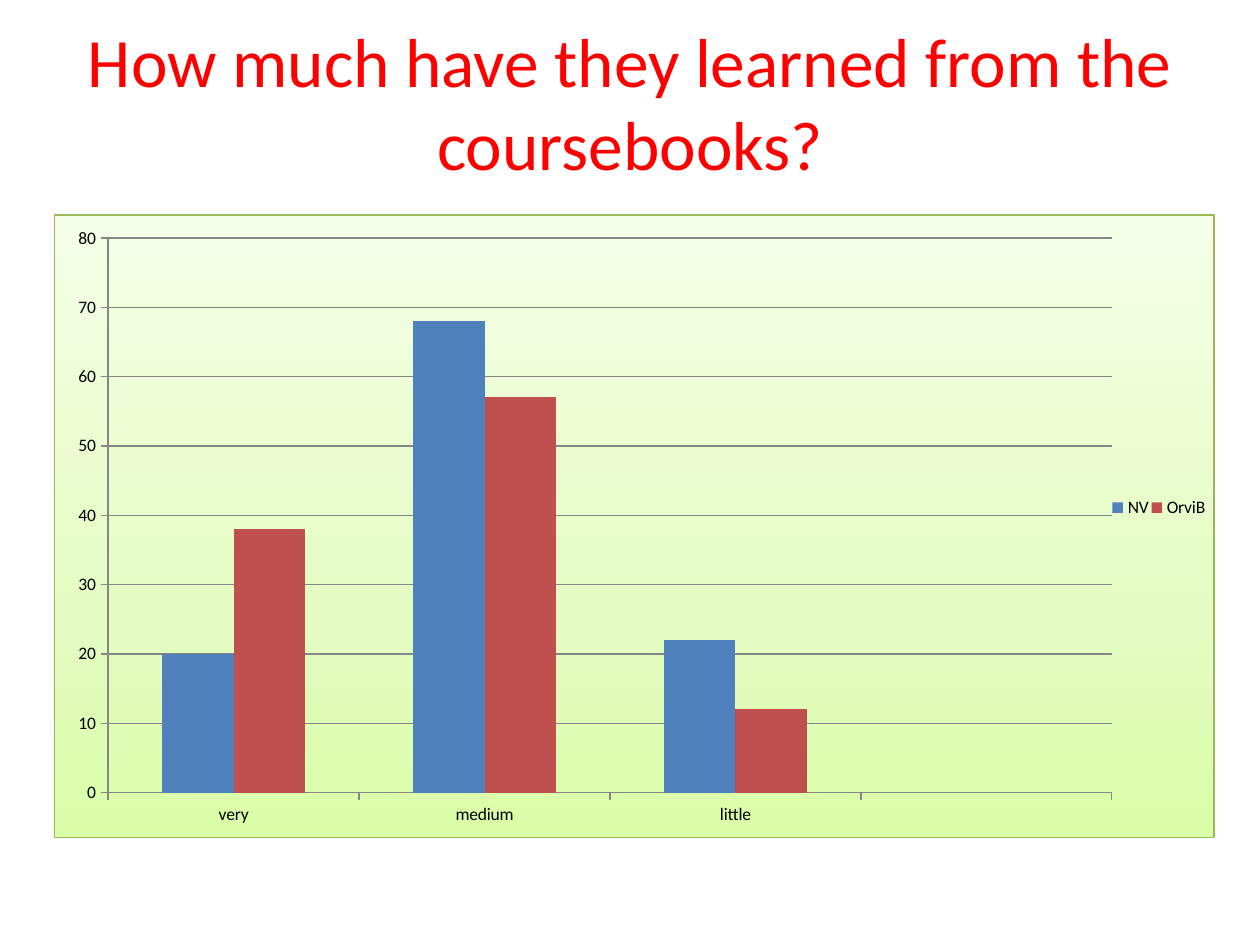
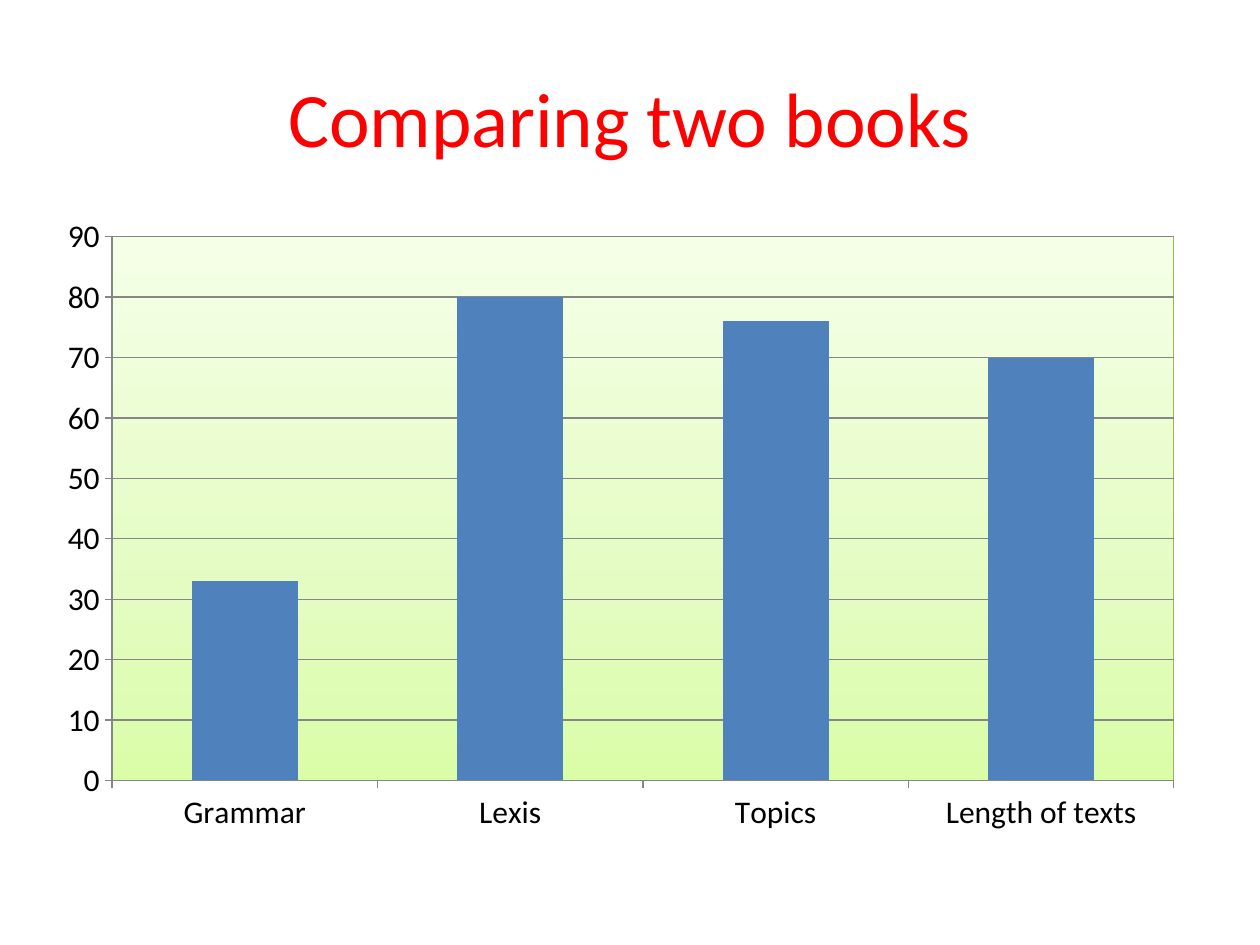
"""Builds two slides that compare coursebooks with column charts."""
from lxml.etree import SubElement
from pptx import Presentation
from pptx.chart.data import CategoryChartData
from pptx.dml.color import RGBColor
from pptx.enum.chart import XL_CHART_TYPE, XL_LEGEND_POSITION, XL_TICK_MARK
from pptx.enum.text import MSO_ANCHOR, MSO_AUTO_SIZE, PP_ALIGN
from pptx.oxml import parse_xml
from pptx.oxml.ns import nsdecls, qn
from pptx.util import Inches, Pt

HUES = {
    "title": "FF0000", "text": "000000", "line": "868686", "edge": "98B955",
    "low": "DAFDA7", "mid": "E4FCC2", "high": "F5FFE7",
    "blue": "4F81BD", "red": "C0504D",
}
STOPS = {"low": 0, "mid": 35, "high": 100}
FONT = "Calibri"


def hue(name):
    """Return the named colour."""
    return RGBColor.from_string(HUES[name])


def panel():
    """Return shape properties with the green gradient and its edge."""
    stops = "".join(
        f'<a:gs pos="{at * 1000}"><a:srgbClr val="{HUES[name]}"/></a:gs>'
        for name, at in STOPS.items())
    return parse_xml(
        f'<c:spPr {nsdecls("c", "a")}><a:gradFill rotWithShape="1">'
        f'<a:gsLst>{stops}</a:gsLst><a:lin ang="16200000" scaled="1"/></a:gradFill>'
        f'<a:ln w="{Pt(0.75)}"><a:solidFill><a:srgbClr val="{HUES["edge"]}"/>'
        '</a:solidFill></a:ln></c:spPr>')


def place(node, index, box, inner=False):
    """Give a chart part a fixed box in percent of the chart."""
    for old in node.findall(qn("c:layout")):
        node.remove(old)
    layout = parse_xml(f'<c:layout {nsdecls("c")}><c:manualLayout/></c:layout>')
    rules = [("layoutTarget", "inner")] if inner else []
    rules += [("xMode", "edge"), ("yMode", "edge")]
    rules += [(tag, part / 100) for tag, part in zip("xywh", box)]
    for tag, val in rules:
        SubElement(layout[0], qn(f"c:{tag}")).set("val", str(val))
    node.insert(index, layout)


class Deck:
    """Holds the shared style and the current slide."""

    def __init__(self):
        """Start an empty deck."""
        self.show = Presentation()
        self.show.slide_width, self.show.slide_height = Inches(10), Inches(7.5)
        self.slide = None

    def frame(self, box):
        """Turn percent of the slide into lengths."""
        wide, high = self.show.slide_width, self.show.slide_height
        return [round(part * side / 100) for part, side in zip(box, (wide, high) * 2)]

    def title(self, text, size, high):
        """Add a slide with its title."""
        self.slide = self.show.slides.add_slide(self.show.slide_layouts[5])
        head = self.slide.shapes.title
        head.left, head.top, head.width, head.height = self.frame((5, 4, 90, high))
        body = head.text_frame
        body.word_wrap, body.auto_size = True, MSO_AUTO_SIZE.NONE
        body.vertical_anchor = MSO_ANCHOR.MIDDLE
        para = body.paragraphs[0]
        para.alignment = PP_ALIGN.CENTER
        run = para.add_run()
        run.text = text
        run.font.name, run.font.size = FONT, Pt(size)
        run.font.color.rgb = hue("title")

    def axis(self, axis):
        """Style one axis."""
        axis.major_tick_mark = XL_TICK_MARK.OUTSIDE
        axis.minor_tick_mark = XL_TICK_MARK.NONE
        axis.format.line.color.rgb = hue("line")
        axis.format.line.width = Pt(0.75)

    def chart(self, box, cats, rows, size, top, plot):
        """Add a column chart and return it."""
        data = CategoryChartData()
        data.categories = cats
        for name, vals, _ in rows:
            data.add_series(name, vals)
        chart = self.slide.shapes.add_chart(
            XL_CHART_TYPE.COLUMN_CLUSTERED, *self.frame(box), data).chart
        chart.has_title = chart.has_legend = False
        chart.font.name, chart.font.size = FONT, Pt(size)
        chart.font.color.rgb = hue("text")
        bars = chart.plots[0]
        bars.gap_width, bars.overlap, bars.vary_by_categories = 150, 0, False
        for item, (_, _, shade) in zip(bars.series, rows):
            item.format.fill.solid()
            item.format.fill.fore_color.rgb = hue(shade)
        self.axis(chart.category_axis)
        scale = chart.value_axis
        self.axis(scale)
        scale.minimum_scale, scale.maximum_scale, scale.major_unit = 0, top, 10
        scale.has_major_gridlines = True
        grid = scale.major_gridlines.format.line
        grid.color.rgb, grid.width = hue("line"), Pt(0.75)
        place(self.area(chart), 0, plot, True)
        return chart

    def area(self, chart):
        """Return the plot area of a chart."""
        return chart.element.find(f"{qn('c:chart')}/{qn('c:plotArea')}")

    def legend(self, chart, box):
        """Add a legend on the right."""
        chart.has_legend = True
        key = chart.legend
        key.position, key.include_in_layout = XL_LEGEND_POSITION.RIGHT, False
        place(chart.element.find(f"{qn('c:chart')}/{qn('c:legend')}"), 1, box)


def main():
    """Build both slides and save them."""
    deck = Deck()
    deck.title("How much have they learned from the coursebooks?", 39.6, 13.5)
    chart = deck.chart(
        (4.3, 22.7, 92.1, 66), ["very", "medium", "little", ""],
        [("NV", (20, 68, 22, None), "blue"), ("OrviB", (38, 57, 12, None), "red")],
        10, 80, (4.6, 3.7, 86.6, 89.1))
    deck.legend(chart, (91, 44, 8.5, 6))
    chart.element.find(qn("c:chart")).addnext(panel())

    deck.title("Comparing two books", 44, 16.7)
    chart = deck.chart(
        (3.5, 21.6, 91.5, 67.7), ["Grammar", "Lexis", "Topics", "Length of texts"],
        [("Series 1", (33, 80, 76, 70), "blue")],
        18, 90, (5.9, 5.1, 92.1, 85))
    deck.area(chart).append(panel())
    deck.show.save("out.pptx")


if __name__ == "__main__":
    main()
